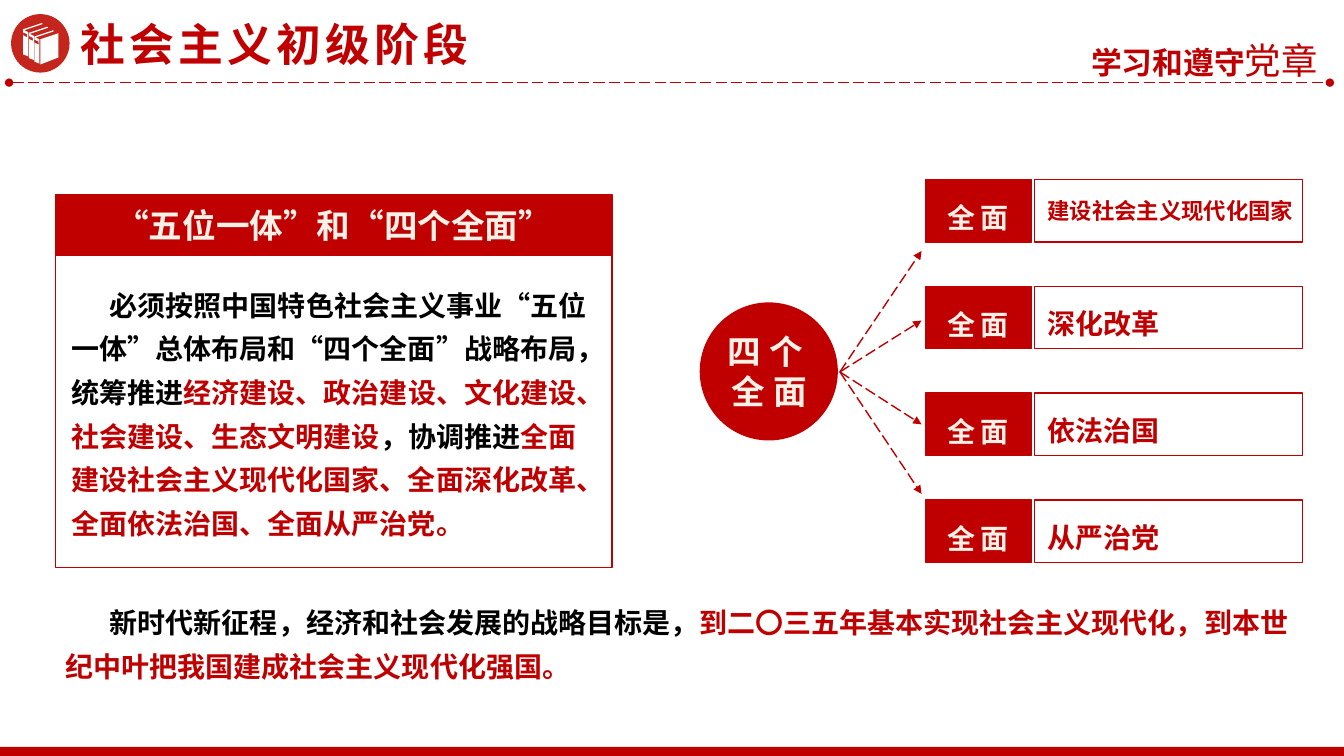
from lxml import etree
from pptx import Presentation
from pptx.dml.color import RGBColor
from pptx.enum.dml import MSO_LINE
from pptx.enum.shapes import MSO_CONNECTOR, MSO_SHAPE
from pptx.enum.text import MSO_ANCHOR, MSO_AUTO_SIZE, PP_ALIGN
from pptx.oxml.ns import qn
from pptx.util import Inches, Pt

RECT, OVAL = MSO_SHAPE.RECTANGLE, MSO_SHAPE.OVAL
LEFT, MID, RIGHT = PP_ALIGN.LEFT, PP_ALIGN.CENTER, PP_ALIGN.RIGHT
TOP, FIT = MSO_ANCHOR.TOP, MSO_AUTO_SIZE.SHAPE_TO_FIT_TEXT
DASH, LINE = MSO_LINE.LONG_DASH, MSO_CONNECTOR.STRAIGHT
HAN, ROMAN = "Noto Sans CJK SC", "Times New Roman"
HUES = {"red": "C00000", "badge": "C4261D", "cream": "F8F1E7",
        "black": "000000", "white": "FFFFFF"}

TITLE = "社会主义初级阶段"
MOTTO = [("学习和遵守", "red", 22, True), ("党章", "red", 26, False)]
HEAD = "“五位一体”和“四个全面”"
BODY = [
    ("必须按照中国特色社会主义事业“五位一体”总体布局和“四个全面”战略布局，统筹推进", "black"),
    ("经济建设、政治建设、文化建设、社会建设、生态文明建设", "red"),
    ("，协调推进", "black"),
    ("全面建设社会主义现代化国家、全面深化改革、全面依法治国、全面从严治党。", "red"),
]
GOAL = [
    ("新时代新征程，经济和社会发展的战略目标是，", "black"),
    ("到二〇三五年基本实现社会主义现代化，到本世纪中叶把我国建成社会主义现代化强国。", "red"),
]
HUB, TAG = "四个全面", "全面"
AIMS = [("建设社会主义现代化国家", 16), ("深化改革", 20),
        ("依法治国", 20), ("从严治党", 20)]
TIPS = [2.49, 3.18, 4.21, 4.9]

SPINE = [(230, 290), (230, 540), (280, 560), (280, 320),
         (240, 300), (420, 240), (420, 230), (410, 230)]
LABEL = [(230, 320), (270, 340), (270, 370), (230, 350)]
COVER = [(400, 390), (400, 640), (580, 570), (580, 330)]

deck = Presentation()
deck.slide_width, deck.slide_height = Inches(13.33), Inches(7.5)
slide = deck.slides.add_slide(deck.slide_layouts[5])
shapes = slide.shapes


def hue(name):
    return RGBColor.from_string(HUES[name])


def write(text, at, box=None, size=20, color="red", font=ROMAN, align=LEFT,
          wrap=True, lead=1.0, gap=0, indent=0):
    box = box or shapes.add_textbox(0, 0, 0, 0)
    box.left, box.top, box.width, box.height = map(Inches, at)
    frame = box.text_frame
    frame.word_wrap, frame.vertical_anchor = wrap, TOP
    frame.auto_size = FIT
    para = frame.paragraphs[0]
    para.alignment, para.line_spacing = align, lead
    if indent:
        para._p.get_or_add_pPr().set("indent", str(Inches(indent)))
    for part in [(text, color)] if isinstance(text, str) else text:
        words, tint, points, bold = part + (size, True)[len(part) - 2:]
        run = para.add_run()
        run.text = words
        run.font.size, run.font.bold = Pt(points), bold
        run.font.color.rgb = hue(tint)
        run.font.name = font
        props = run._r.get_or_add_rPr()
        props.set("lang", "zh-CN")
        if gap:
            props.set("spc", str(gap * 100))
        etree.SubElement(props, qn("a:ea")).set("typeface", HAN)


def paint(shape, fill=None, edge=None):
    shape.shadow.inherit = False
    if fill:
        shape.fill.solid()
        shape.fill.fore_color.rgb = hue(fill)
    else:
        shape.fill.background()
    if edge:
        shape.line.color.rgb = hue(edge)
        shape.line.width = Pt(1)
    else:
        shape.line.fill.background()


def block(kind, at, fill=None, edge=None):
    paint(shapes.add_shape(kind, *map(Inches, at)), fill, edge)


def dash(ends, head=None, tail=None):
    wire = shapes.add_connector(LINE, *map(Inches, ends))
    wire.line.color.rgb = hue("red")
    wire.line.width, wire.line.dash_style = Pt(1), DASH
    props = wire._element.spPr
    for side, mark in (("a:headEnd", head), ("a:tailEnd", tail)):
        if mark:
            etree.SubElement(props.find(qn("a:ln")), qn(side)).set("type", mark)
    etree.SubElement(props, qn("a:effectLst"))


def books():
    rings = [COVER]
    for i in range(3):
        dx, dy = 56 * i, 36 * i
        rings += [[(x + dx, y + dy) for x, y in ring] for ring in (SPINE, LABEL)]
    pen = shapes.build_freeform(*rings[0][0], scale=914.4)
    pen.add_line_segments(rings[0][1:])
    for ring in rings[1:]:
        pen.move_to(*ring[0])
        pen.add_line_segments(ring[1:])
    paint(pen.convert_to_shape(), "white")


dash((0.09, 0.82, 13.19, 0.82), head="oval", tail="oval")
write(MOTTO, (10.6, 0.33, 2.57, 0.54), font=HAN, align=RIGHT, wrap=False)
block(OVAL, (0.11, 0.14, 0.58, 0.58), "badge")
books()
block(RECT, (0, 7.41, 13.33, 0.09), "red")
write(TITLE, (0.7, 0.12, 4.13, 0.64), box=shapes.title, size=32, wrap=False, gap=3)

for i, (aim, size) in enumerate(AIMS):
    y = 1.78 + 1.06 * i
    block(RECT, (9.18, y, 1.05, 0.62), "red", "red")
    write(TAG, (9.23, y + 0.06, 0.94, 0.54), color="cream", align=MID, lead=1.3, gap=3)
    wide = len(aim) * size / 72 + 0.2
    write(aim, (10.29, y + 0.05, wide, 0.54), size=size, wrap=False, lead=1.3)
    block(RECT, (10.26, y, 2.66, 0.62), edge="red")

block(OVAL, (6.94, 3, 1.37, 1.37), "red")
write(HUB, (7.03, 3.23, 1.2, 0.91), size=24, color="cream", align=MID, gap=6)
for tip in TIPS:
    dash((8.33, 3.69, 9.14, tip), tail="triangle")

block(RECT, (0.55, 1.93, 5.52, 0.61), "red")
write(HEAD, (1.02, 1.98, 4.58, 0.5), size=24, color="cream", align=MID, wrap=False)
write(BODY, (0.61, 2.71, 5.4, 2.73), lead=1.3, indent=0.38)
block(RECT, (0.55, 1.93, 5.52, 3.7), edge="red")
write(GOAL, (0.55, 5.86, 12.52, 0.97), lead=1.3, indent=0.44)

deck.save("out.pptx")
